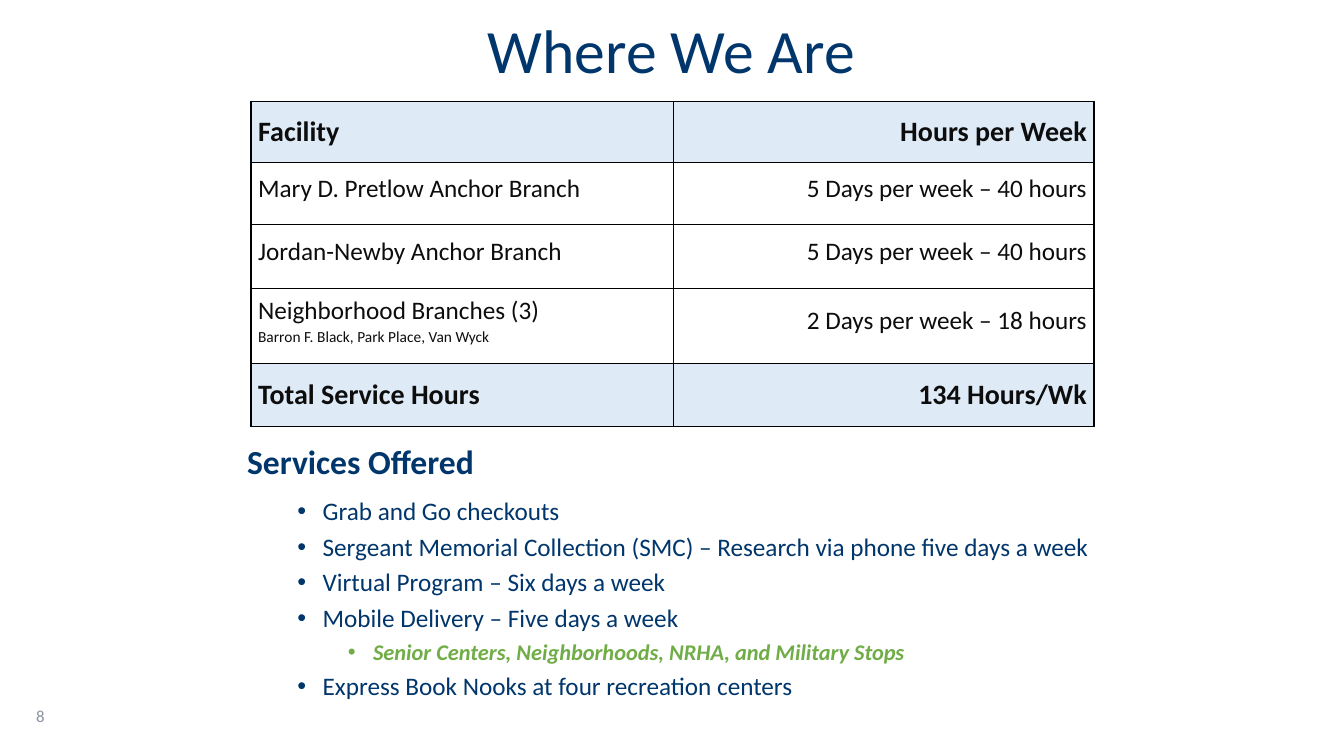
from lxml import etree
from pptx import Presentation
from pptx.dml.color import RGBColor
from pptx.enum.text import MSO_ANCHOR, MSO_AUTO_SIZE, PP_ALIGN
from pptx.oxml.ns import qn
from pptx.util import Pt

LEFT, CENTER, RIGHT, JUSTIFY = PP_ALIGN.LEFT, PP_ALIGN.CENTER, PP_ALIGN.RIGHT, PP_ALIGN.JUSTIFY
MIDDLE, TOP = MSO_ANCHOR.MIDDLE, MSO_ANCHOR.TOP
NO_FIT = MSO_AUTO_SIZE.NONE
EMU_PER_PX = 9144
NAVY, GREEN, GRAY, INK, BLACK = "00366C", "70AD47", "8C91A2", "0D0D0D", "000000"
HEADER_BLUE, TOTAL_BLUE = "DEEAF6", "DEEBF7"

FACILITIES = [
    (["Facility"], "Hours per Week", 60, HEADER_BLUE),
    (["Mary D. Pretlow Anchor Branch"], "5 Days per week – 40 hours", 62, None),
    (["Jordan-Newby Anchor Branch"], "5 Days per week – 40 hours", 63, None),
    (["Neighborhood Branches (3)", "Barron F. Black, Park Place, Van Wyck"],
     "2 Days per week – 18 hours", 75, None),
    (["Total Service Hours"], "134 Hours/Wk", 62, TOTAL_BLUE),
]
SERVICES = [
    (0, "Services Offered"),
    (1, "Grab and Go checkouts"),
    (1, "Sergeant Memorial Collection (SMC) – Research via phone five days a week"),
    (1, "Virtual Program – Six days a week"),
    (1, "Mobile Delivery – Five days a week"),
    (2, "Senior Centers, Neighborhoods, NRHA, and Military Stops"),
    (1, "Express Book Nooks at four recreation centers"),
]
LEVEL_STYLES = [(24, NAVY, True, False), (18, NAVY, False, False), (16, GREEN, True, True)]


def px(length):
    return length * EMU_PER_PX


def color(value):
    return RGBColor.from_string(value)


class PageBuilder:
    font_name = "Calibri"

    def __init__(self, page):
        self.page = page

    def place(self, shape, left, top, width, height):
        shape.left, shape.top = px(left), px(top)
        shape.width, shape.height = px(width), px(height)

    def style(self, para, size, ink, bold=False, italic=False):
        font = para.font
        font.name, font.size = self.font_name, Pt(size)
        font.bold, font.italic = bold, italic
        font.color.rgb = color(ink)

    def frame(self, shape, anchor):
        frame = shape.text_frame
        frame.word_wrap, frame.auto_size = True, NO_FIT
        frame.vertical_anchor = anchor
        return frame

    def title(self, text, *area):
        shape = self.page.shapes.title
        self.place(shape, *area)
        para = self.frame(shape, MIDDLE).paragraphs[0]
        para.text, para.alignment, para.line_spacing = text, CENTER, 0.9
        self.style(para, 44, NAVY)

    def outline(self, items, *area):
        shape = self.page.placeholders[1]
        self.place(shape, *area)
        frame = self.frame(shape, TOP)
        for index, (level, text) in enumerate(items):
            para = frame.paragraphs[0] if index == 0 else frame.add_paragraph()
            para.text, para.level, para.alignment = text, level, LEFT
            para.line_spacing = 0.9
            para.space_before = Pt(6 if index else 0)
            para.space_after = Pt(0 if level else 6)
            self.bullet(para, level)
            self.style(para, *LEVEL_STYLES[level])

    def bullet(self, para, level):
        properties = para._p.get_or_add_pPr()
        properties.set("marL", str(px(50 * level + 25 if level else 0)))
        properties.set("indent", str(px(-25 if level else 0)))
        if level:
            etree.SubElement(properties, qn("a:buFont"), typeface="Arial")
            etree.SubElement(properties, qn("a:buChar"), char="•")
        else:
            etree.SubElement(properties, qn("a:buNone"))

    def label(self, text, *area):
        box = self.page.shapes.add_textbox(*map(px, area))
        para = self.frame(box, MIDDLE).paragraphs[0]
        para.text = text
        self.style(para, 12, GRAY)

    def border(self, cell):
        properties = cell._tc.get_or_add_tcPr()
        for side in ("lnL", "lnR", "lnT", "lnB"):
            line = etree.SubElement(properties, qn(f"a:{side}"), w=str(Pt(1)))
            fill = etree.SubElement(line, qn("a:solidFill"))
            etree.SubElement(fill, qn("a:srgbClr"), val=BLACK)

    def cell(self, cell, lines, alignment, fill):
        cell.margin_left = cell.margin_right = px(7)
        cell.margin_top = cell.margin_bottom = 0
        cell.vertical_anchor = MIDDLE
        self.border(cell)
        if fill:
            cell.fill.solid()
            cell.fill.fore_color.rgb = color(fill)
        else:
            cell.fill.background()
        cell.text_frame.text = "\n".join(lines)
        for index, para in enumerate(cell.text_frame.paragraphs):
            para.alignment = alignment
            if fill:
                self.style(para, 20, INK, bold=True)
            else:
                para.line_spacing = Pt(15)
                self.style(para, 11 if index else 18, INK)

    def table(self, rows, widths, left, top):
        height = sum(row[2] for row in rows)
        area = map(px, (left, top, sum(widths), height))
        table = self.page.shapes.add_table(len(rows), len(widths), *area).table
        table.first_row = table.horz_banding = False
        for column, width in zip(table.columns, widths):
            column.width = px(width)
        for index, (facility, hours, row_height, fill) in enumerate(rows):
            table.rows[index].height = px(row_height)
            self.cell(table.cell(index, 0), facility, LEFT if fill else JUSTIFY, fill)
            self.cell(table.cell(index, 1), [hours], RIGHT, fill)


def main():
    deck = Presentation()
    deck.slide_width, deck.slide_height = px(1333), px(750)
    builder = PageBuilder(deck.slides.add_slide(deck.slide_layouts[1]))
    builder.title("Where We Are", 235, 6, 862, 95)
    builder.outline(SERVICES, 235, 437, 877, 281)
    builder.label("8", 26, 690, 300, 40)
    builder.table(FACILITIES, [419, 417], 249, 101)
    deck.save("out.pptx")


if __name__ == "__main__":
    main()
